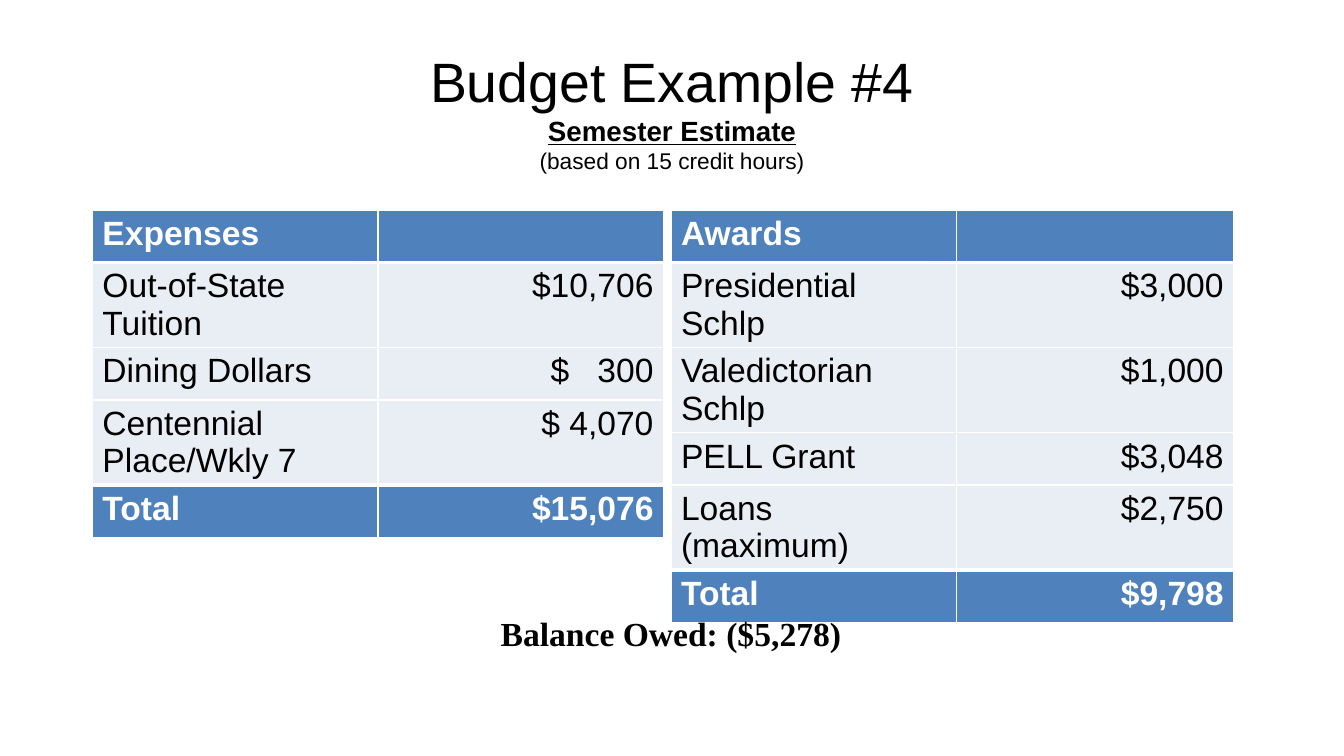
from dataclasses import dataclass

from lxml.etree import SubElement
from pptx import Presentation
from pptx.dml.color import RGBColor
from pptx.enum.text import MSO_ANCHOR as Anchor, MSO_AUTO_SIZE as AutoSize, PP_ALIGN as Align
from pptx.oxml.ns import qn
from pptx.util import Emu, Pt

EMU_PER_PX = 9525
BLUE, PALE, WHITE, BLACK = "4F81BD", "E9EDF4", "FFFFFF", "000000"
THIN, THICK = 1, 3


@dataclass
class BudgetTable:
    left: int
    columns: tuple[int, int]
    heading: str
    items: list[tuple[str, str]]
    total: str


TABLES = [
    BudgetTable(88, (272, 272), "Expenses", [
        ("Out-of-State Tuition", "$10,706"),
        ("Dining Dollars", "$\t300"),  # a tab marks a wide gap
        ("Centennial Place/Wkly 7", "$ 4,070"),
    ], "$15,076"),
    BudgetTable(639, (272, 264), "Awards", [
        ("Presidential Schlp", "$3,000"),
        ("Valedictorian Schlp", "$1,000"),
        ("PELL Grant", "$3,048"),
        ("Loans (maximum)", "$2,750"),
    ], "$9,798"),
]
TABLE_TOP, ROW_HEIGHT = 200, 50
WIDE_GAP = 1334  # two extra space widths at 24 pt, in hundredths of a point


def px(value: int) -> Emu:
    return Emu(value * EMU_PER_PX)


def rgb(value: str) -> RGBColor:
    return RGBColor.from_string(value)


def add_span(para, text: str, *, size: float = 24, font: str = "Arial", color: str = BLACK,
             bold: bool = False, underline: bool = False, spacing: int = 0) -> None:
    span = para.add_run()
    span.text = text
    span.font.size, span.font.name = Pt(size), font
    span.font.bold, span.font.underline = bold, underline
    span.font.color.rgb = rgb(color)
    if spacing:
        span.font._element.set("spc", str(spacing))


def set_borders(cell, top: int, bottom: int) -> None:
    properties = cell._tc.get_or_add_tcPr()
    for side, width in (("L", THIN), ("R", THIN), ("T", top), ("B", bottom)):
        line = SubElement(properties, qn(f"a:ln{side}"), w=str(Pt(width)))
        fill = SubElement(line, qn("a:solidFill"))
        SubElement(fill, qn("a:srgbClr"), val=WHITE)


def fill_cell(cell, text: str, *, strong: bool, align: Align) -> None:
    cell.fill.solid()
    cell.fill.fore_color.rgb = rgb(BLUE if strong else PALE)
    para = cell.text_frame.paragraphs[0]
    para.alignment = align
    style = {"color": WHITE if strong else BLACK, "bold": strong}
    before, gap, after = text.partition("\t")
    if before:
        add_span(para, before, **style)
    if gap:
        add_span(para, " ", spacing=WIDE_GAP, **style)
        add_span(para, after, **style)


def add_budget_table(page, budget: BudgetTable) -> None:
    rows = [(budget.heading, ""), *budget.items, ("Total", budget.total)]
    last = len(rows) - 1
    table = page.shapes.add_table(
        len(rows), 2, px(budget.left), px(TABLE_TOP),
        px(sum(budget.columns)), px(ROW_HEIGHT * len(rows))).table
    for column, width in zip(table.columns, budget.columns):
        column.width = px(width)
    for r, texts in enumerate(rows):
        table.rows[r].height = px(ROW_HEIGHT)
        for c, text in enumerate(texts):
            cell = table.cell(r, c)
            set_borders(cell, THICK if r in (1, last) else THIN,
                        THICK if r in (0, last - 1) else THIN)
            fill_cell(cell, text, strong=r in (0, last),
                      align=Align.RIGHT if c else Align.LEFT)


def add_title(page) -> None:
    title = page.shapes.title
    title.left, title.top, title.width, title.height = px(88), px(56), px(1104), px(99)
    frame = title.text_frame
    frame.auto_size, frame.vertical_anchor = AutoSize.NONE, Anchor.MIDDLE
    para = frame.paragraphs[0]
    para.alignment = Align.CENTER
    add_span(para, "Budget Example #4", size=39.6)
    para.add_line_break()
    add_span(para, "Semester Estimate", size=19.8, bold=True, underline=True)
    para.add_line_break()
    add_span(para, "(based on 15 credit hours)", size=16.2)


def add_balance(page) -> None:
    box = page.shapes.add_textbox(px(87), px(579), px(1104), px(48))
    box.text_frame.word_wrap = True
    para = box.text_frame.paragraphs[0]
    para.alignment = Align.CENTER
    add_span(para, "Balance Owed: ($5,278)", font="Times New Roman", bold=True)


def main() -> None:
    deck = Presentation()
    deck.slide_width, deck.slide_height = px(1280), px(720)
    page = deck.slides.add_slide(deck.slide_layouts[5])  # title only
    add_title(page)
    for budget in TABLES:
        add_budget_table(page, budget)
    add_balance(page)
    deck.save("out.pptx")


if __name__ == "__main__":
    main()
